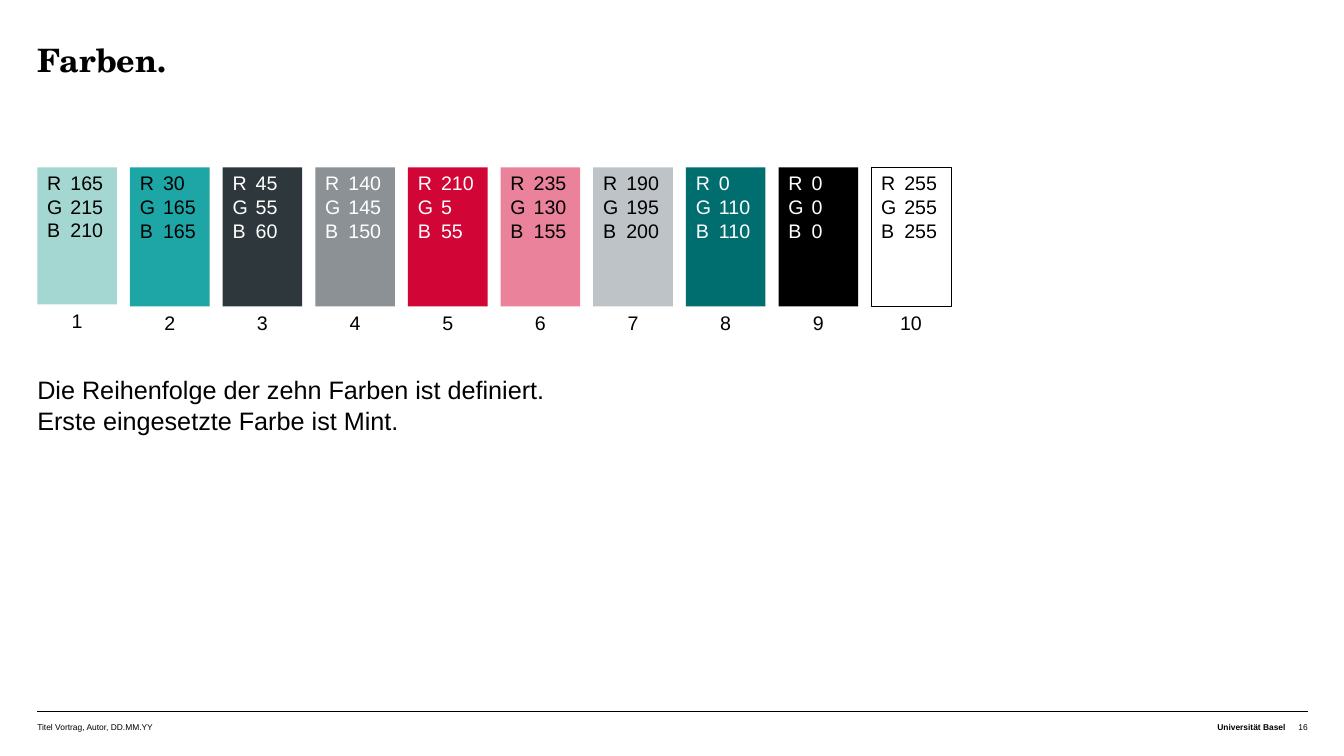
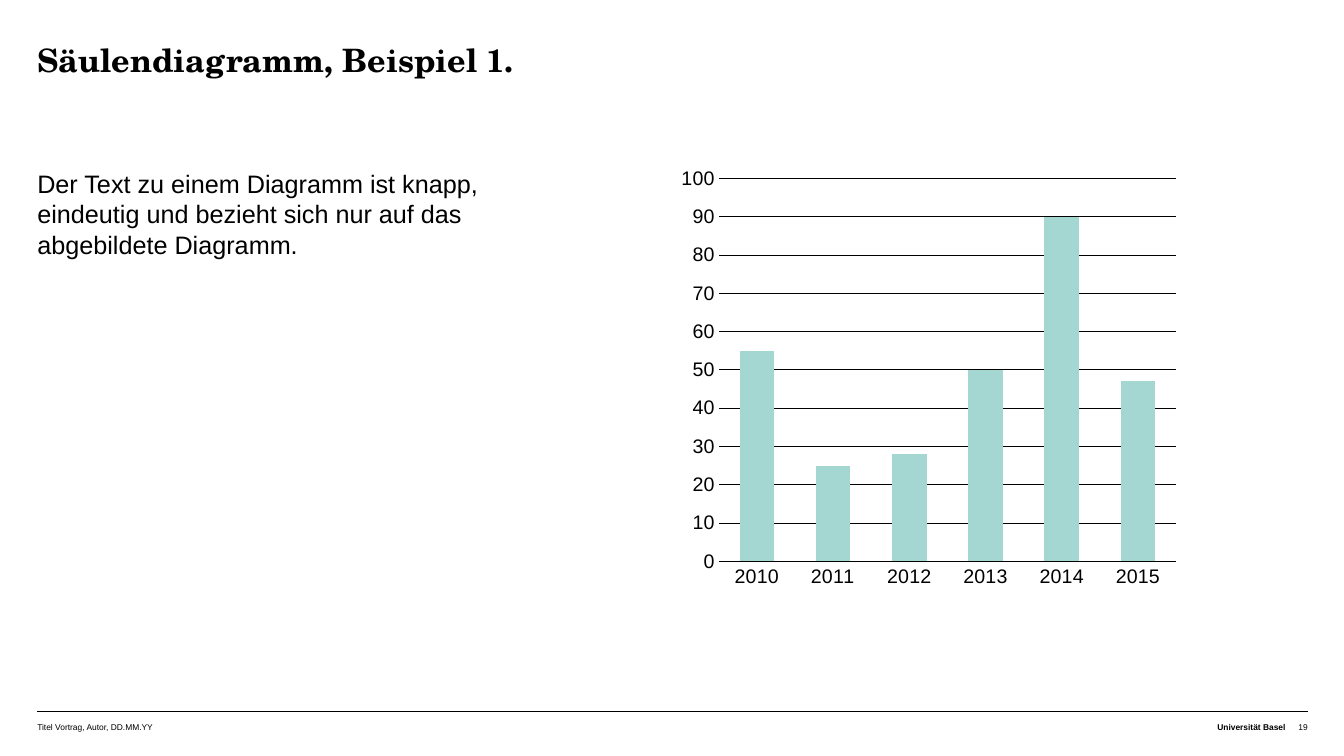
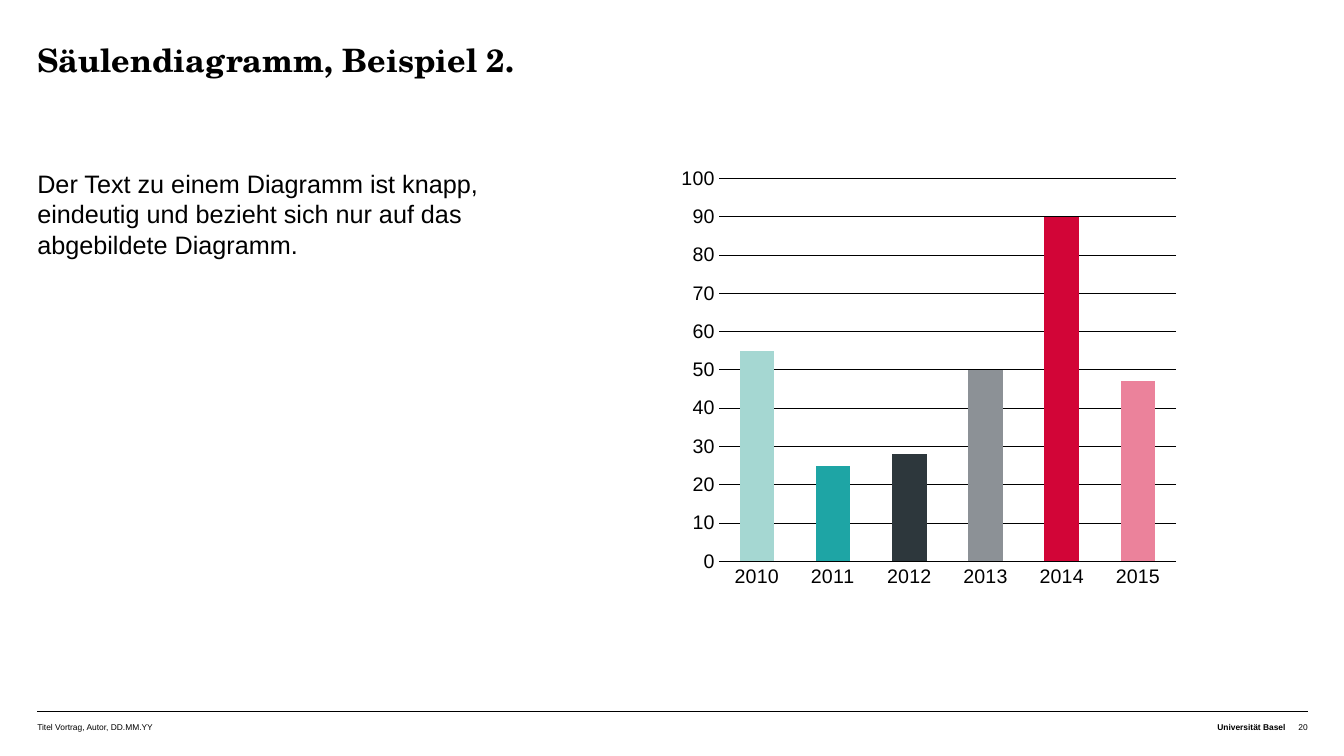
from dataclasses import dataclass

from pptx import Presentation
from pptx.chart.data import CategoryChartData
from pptx.dml.color import RGBColor
from pptx.enum.chart import XL_CHART_TYPE, XL_TICK_MARK
from pptx.enum.shapes import MSO_CONNECTOR, MSO_SHAPE
from pptx.enum.text import MSO_ANCHOR, MSO_AUTO_SIZE, PP_ALIGN
from pptx.oxml import parse_xml
from pptx.oxml.ns import nsdecls, qn
from pptx.oxml.xmlchemy import OxmlElement
from pptx.util import Inches, Pt

COLUMN = XL_CHART_TYPE.COLUMN_CLUSTERED
NO_TICK = XL_TICK_MARK.NONE
STRAIGHT = MSO_CONNECTOR.STRAIGHT
RECTANGLE = MSO_SHAPE.RECTANGLE
TOP = MSO_ANCHOR.TOP
FIXED = MSO_AUTO_SIZE.NONE
LEFT, CENTER, RIGHT = PP_ALIGN.LEFT, PP_ALIGN.CENTER, PP_ALIGN.RIGHT
TITLE_ONLY = 5


@dataclass(frozen=True)
class Theme:
    black: RGBColor = RGBColor(0, 0, 0)
    white: RGBColor = RGBColor(255, 255, 255)
    mint: RGBColor = RGBColor(165, 215, 210)
    teal: RGBColor = RGBColor(30, 165, 165)
    anthracite: RGBColor = RGBColor(45, 55, 60)
    gray: RGBColor = RGBColor(140, 145, 150)
    red: RGBColor = RGBColor(210, 5, 55)
    pink: RGBColor = RGBColor(235, 130, 155)
    light_gray: RGBColor = RGBColor(190, 195, 200)
    dark_teal: RGBColor = RGBColor(0, 110, 110)
    title_font: str = "TeX Gyre Schola"
    body_font: str = "Arial"
    title_size: float = 23
    title_leading: float = 25
    body_size: float = 18
    body_leading: float = 22
    label_size: float = 14
    footer_size: float = 6
    hairline: float = 0.25
    grid_line: float = 0.5
    margin: float = 0.37
    content_width: float = 12.6
    content_top: float = 1.66


THEME = Theme()

PALETTE = [
    (THEME.mint, THEME.black),
    (THEME.teal, THEME.black),
    (THEME.anthracite, THEME.white),
    (THEME.gray, THEME.white),
    (THEME.red, THEME.white),
    (THEME.pink, THEME.black),
    (THEME.light_gray, THEME.black),
    (THEME.dark_teal, THEME.white),
    (THEME.black, THEME.white),
    (THEME.white, THEME.black),
]

YEARS = ["2010", "2011", "2012", "2013", "2014", "2015"]
VALUES = [55, 25, 28, 50, 90, 47]
CHART_TEXT = (
    "Der Text zu einem Diagramm ist knapp, eindeutig "
    "und bezieht sich nur auf das abgebildete Diagramm."
)


def write(holder, *lines, size=THEME.body_size, font=THEME.body_font,
          color=THEME.black, bold=False, align=LEFT, leading=None,
          insets=(0, 0, 0, 0), tab=None):
    frame = holder.text_frame
    frame.word_wrap = True
    frame.auto_size = FIXED
    frame.vertical_anchor = TOP
    (frame.margin_left, frame.margin_top,
     frame.margin_right, frame.margin_bottom) = map(Inches, insets)
    for index, line in enumerate(lines):
        paragraph = frame.add_paragraph() if index else frame.paragraphs[0]
        paragraph.alignment = align
        if leading:
            paragraph.line_spacing = Pt(leading)
        if tab:
            stops = OxmlElement("a:tabLst")
            stop = OxmlElement("a:tab")
            stop.set("pos", str(Inches(tab)))
            stop.set("algn", "l")
            stops.append(stop)
            paragraph._p.get_or_add_pPr().append(stops)
        run = paragraph.add_run()
        run.text = line
        run.font.size = Pt(size)
        run.font.name = font
        run.font.bold = bold
        run.font.color.rgb = color


def add_text(slide, box, *lines, **style):
    write(slide.shapes.add_textbox(*map(Inches, box)), *lines, **style)


def set_line(line, width):
    line.color.rgb = THEME.black
    line.width = Pt(width)


def add_footer(slide, box, number):
    left, top, width = box
    right = left + width
    rule = slide.shapes.add_connector(
        STRAIGHT, *map(Inches, (left, top, right, top)))
    set_line(rule.line, THEME.hairline)
    rule.element.spPr.append(OxmlElement("a:effectLst"))
    parts = [
        ("Titel Vortrag, Autor, DD.MM.YY", left, 3.15, LEFT, False),
        ("Universität Basel", right - 3, 2.78, RIGHT, True),
        (str(number), right - 0.21, 0.21, RIGHT, False),
    ]
    for text, start, extent, align, bold in parts:
        add_text(slide, (start, top + 0.08, extent, 0.2), text,
                 size=THEME.footer_size, align=align, bold=bold,
                 insets=(0, 0.02, 0, 0))


def start_slide(deck, title, number):
    slide = deck.slides.add_slide(deck.slide_layouts[TITLE_ONLY])
    heading = slide.shapes.title
    heading.left, heading.top = Inches(THEME.margin), Inches(0.44)
    heading.width, heading.height = Inches(THEME.content_width), Inches(0.83)
    write(heading, title, size=THEME.title_size, font=THEME.title_font,
          bold=True, leading=THEME.title_leading)
    add_footer(slide, (THEME.margin, 7.06, THEME.content_width), number)
    return slide


def add_swatch(slide, box, number, fill, ink):
    left, top, width, height = box
    swatch = slide.shapes.add_shape(RECTANGLE, *map(Inches, box))
    swatch.shadow.inherit = False
    swatch.fill.solid()
    swatch.fill.fore_color.rgb = fill
    if fill == THEME.white:
        set_line(swatch.line, THEME.hairline)
    else:
        swatch.line.fill.background()
    channels = [f"{name}\t{value}" for name, value in zip("RGB", fill)]
    write(swatch, *channels, size=THEME.label_size, color=ink,
          insets=(0.1, 0.04, 0, 0), tab=0.23)
    add_text(slide, (left, top + height, width, 0.34), str(number),
             size=THEME.label_size, align=CENTER,
             insets=(0.1, 0.05, 0.1, 0.05))


def add_palette(slide, box):
    left, top, width, height = box
    swatch_width = 0.79
    pitch = (width - swatch_width) / (len(PALETTE) - 1)
    for index, (fill, ink) in enumerate(PALETTE):
        swatch_height = height if index else height - 0.02
        add_swatch(slide,
                   (left + index * pitch, top, swatch_width, swatch_height),
                   index + 1, fill, ink)


def place_plot(chart, **fractions):
    plot_area = chart.element.find(".//" + qn("c:plotArea"))
    for old in plot_area.findall(qn("c:layout")):
        plot_area.remove(old)
    modes = '<c:xMode val="edge"/><c:yMode val="edge"/>'
    sizes = "".join(f'<c:{k} val="{v}"/>' for k, v in fractions.items())
    plot_area.insert(0, parse_xml(
        f'<c:layout {nsdecls("c")}><c:manualLayout>'
        f'<c:layoutTarget val="inner"/>{modes}{sizes}'
        '</c:manualLayout></c:layout>'))


def add_columns(slide, box, colors):
    data = CategoryChartData()
    data.categories = YEARS
    data.add_series("Series 1", VALUES)
    chart = slide.shapes.add_chart(COLUMN, *map(Inches, box), data).chart
    chart.has_legend = False
    chart.has_title = False
    chart.font.size = Pt(THEME.label_size)
    chart.font.name = THEME.body_font
    chart.font.color.rgb = THEME.black

    years, scale = chart.category_axis, chart.value_axis
    for axis in (years, scale):
        axis.major_tick_mark = NO_TICK
        axis.minor_tick_mark = NO_TICK
    set_line(years.format.line, THEME.grid_line)
    scale.minimum_scale, scale.maximum_scale, scale.major_unit = 0, 100, 10
    scale.format.line.fill.background()
    scale.has_major_gridlines = True
    set_line(scale.major_gridlines.format.line, THEME.grid_line)

    plot = chart.plots[0]
    plot.gap_width = 120
    plot.vary_by_categories = False
    series = plot.series[0]
    series.invert_if_negative = False
    series.format.fill.solid()
    series.format.fill.fore_color.rgb = colors[0]
    for index, color in enumerate(colors[1:], 1):
        column = series.points[index].format.fill
        column.solid()
        column.fore_color.rgb = color
    place_plot(chart, x=0.099, y=0.024, w=0.9, h=0.896)


def build_color_slide(deck):
    slide = start_slide(deck, "Farben.", 16)
    add_palette(slide, (THEME.margin, THEME.content_top, 9.06, 1.38))
    add_text(slide, (THEME.margin, 3.71, 10, 0.71),
             "Die Reihenfolge der zehn Farben ist definiert.",
             "Erste eingesetzte Farbe ist Mint.",
             leading=THEME.body_leading)


def build_chart_slide(deck, title, number, text_width, colors):
    slide = start_slide(deck, title, number)
    add_text(slide, (THEME.margin, THEME.content_top, text_width, 4.25),
             CHART_TEXT, leading=THEME.body_leading)
    add_columns(slide, (6.63, THEME.content_top, 5.04, 4.25), colors)


def main():
    deck = Presentation()
    deck.slide_width, deck.slide_height = Inches(13.33), Inches(7.5)
    column_colors = [fill for fill, _ in PALETTE[:len(YEARS)]]
    build_color_slide(deck)
    build_chart_slide(deck, "Säulendiagramm, Beispiel 1.", 19, 4.73,
                      column_colors[:1])
    build_chart_slide(deck, "Säulendiagramm, Beispiel 2.", 20, 5.12,
                      column_colors)
    deck.save("out.pptx")


if __name__ == "__main__":
    main()
